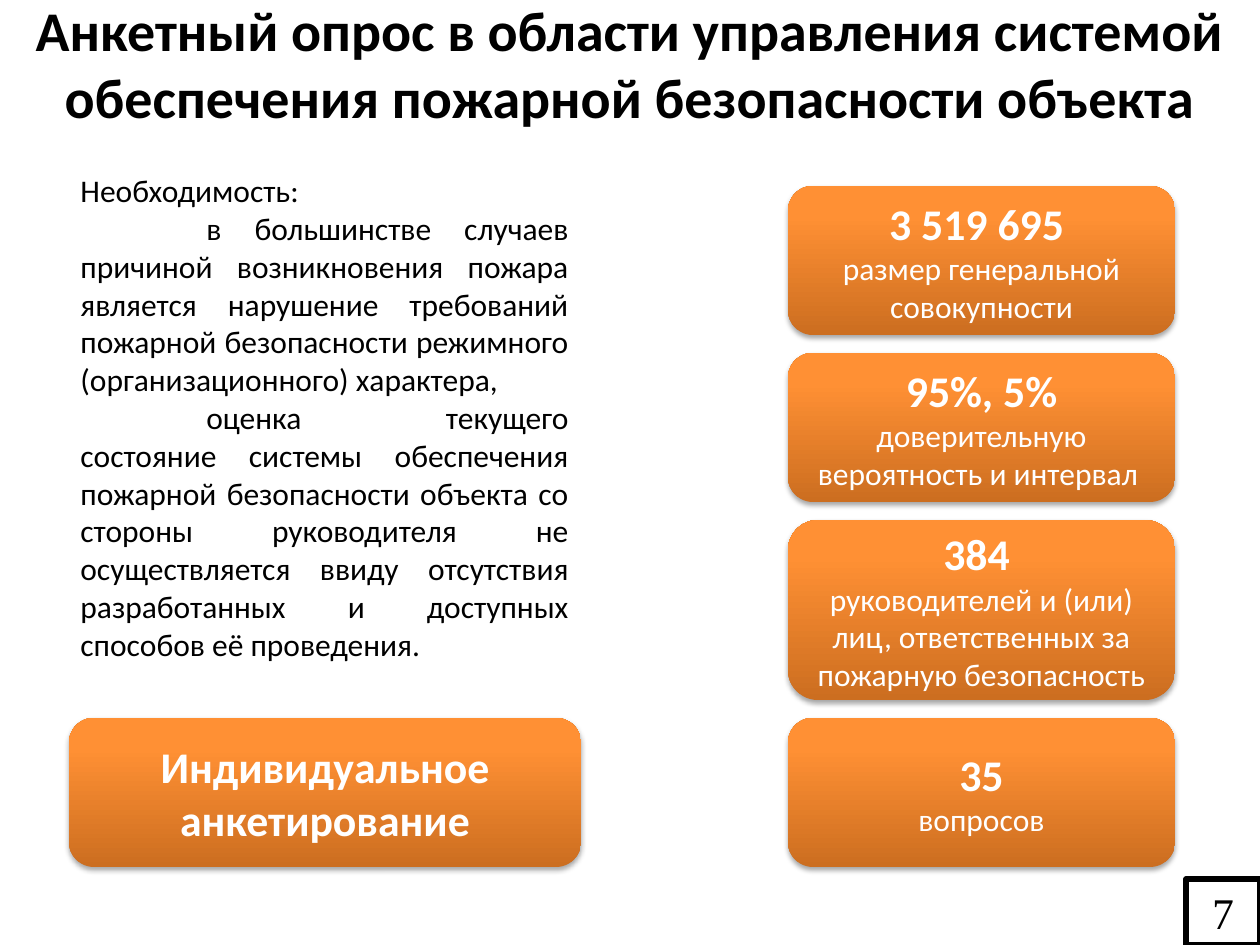
import dataclasses

import pptx
import pptx.dml.color
import pptx.enum.shapes
import pptx.enum.text
import pptx.oxml
import pptx.oxml.ns
import pptx.util

EMU_PER_PX = 914400 / 126
ALIGN = pptx.enum.text.PP_ALIGN
ANCHOR = pptx.enum.text.MSO_ANCHOR
SHAPES = pptx.enum.shapes.MSO_SHAPE


@dataclasses.dataclass(frozen=True)
class Theme:
    font: str = "Calibri"
    number_font: str = "Times New Roman"
    dark: str = "000000"
    light: str = "FFFFFF"
    card_gradient: tuple = ((0, "CC6E20"), (80, "FF9034"), (100, "FF9136"))
    title_size: int = 32
    key_size: int = 25
    body_size: int = 18


@dataclasses.dataclass(frozen=True)
class Box:
    left: int
    top: int
    width: int
    height: int


@dataclasses.dataclass(frozen=True)
class Card:
    box: Box
    heading: str
    caption: str = ""


THEME = Theme()
TITLE = "Анкетный опрос в области управления системой обеспечения пожарной безопасности объекта"
REASONS_HEADING = "Необходимость:"
REASONS = (
    "в большинстве случаев причиной возникновения пожара является нарушение требований "
    "пожарной безопасности режимного (организационного) характера,",
    "оценка текущего состояние системы обеспечения пожарной безопасности объекта со стороны "
    "руководителя не осуществляется ввиду отсутствия разработанных и доступных способов её "
    "проведения.",
)
REASON_INDENT = 126
CARD_HEIGHT = 149
CARD_GAP = 18
COLUMN_LEFT, COLUMN_TOP, COLUMN_WIDTH = 788, 186, 387
# Height, heading and caption of each card in the right column
COLUMN = (
    (CARD_HEIGHT, "3 519 695 ", "размер генеральной совокупности"),
    (CARD_HEIGHT, "95%, 5%", "доверительную вероятность и интервал "),
    (180, "384 ", "руководителей и (или) лиц, ответственных за пожарную безопасность"),
    (CARD_HEIGHT, "35", "вопросов"),
)


def emu(px: int) -> pptx.util.Emu:
    return pptx.util.Emu(round(px * EMU_PER_PX))


def edges(box: Box) -> tuple:
    return emu(box.left), emu(box.top), emu(box.width), emu(box.height)


def format_paragraph(paragraph, text, size, color, align, bold=False, font=THEME.font) -> None:
    paragraph.text = text
    paragraph.alignment = align
    paragraph.font.name = font
    paragraph.font.size = pptx.util.Pt(size)
    paragraph.font.bold = bold
    paragraph.font.color.rgb = pptx.dml.color.RGBColor.from_string(color)


def add_title(slide) -> None:
    title = slide.shapes.title
    title.left, title.top, title.width, title.height = edges(Box(0, 0, 1260, 125))
    frame = title.text_frame
    frame.word_wrap = True
    frame.auto_size = pptx.enum.text.MSO_AUTO_SIZE.NONE
    frame.vertical_anchor = ANCHOR.MIDDLE
    format_paragraph(frame.paragraphs[0], TITLE, THEME.title_size, THEME.dark, ALIGN.CENTER, True)


def add_reasons(slide) -> None:
    frame = slide.shapes.add_textbox(*edges(Box(68, 165, 513, 509))).text_frame
    frame.word_wrap = True
    frame.auto_size = pptx.enum.text.MSO_AUTO_SIZE.SHAPE_TO_FIT_TEXT
    format_paragraph(
        frame.paragraphs[0], REASONS_HEADING, THEME.body_size, THEME.dark, ALIGN.JUSTIFY
    )
    for reason in REASONS:
        paragraph = frame.add_paragraph()
        format_paragraph(paragraph, reason, THEME.body_size, THEME.dark, ALIGN.JUSTIFY)
        paragraph._p.get_or_add_pPr().set("indent", str(emu(REASON_INDENT)))


def style_card(shape) -> None:
    """Give the card its upward gradient and soft shadow, without an outline."""
    namespace = pptx.oxml.ns.nsdecls("a")
    shape.fill.gradient()
    shape.fill.gradient_angle = 90
    stops = "".join(
        f'<a:gs pos="{position * 1000}"><a:srgbClr val="{color}"/></a:gs>'
        for position, color in THEME.card_gradient
    )
    properties = shape._element.spPr
    old_stops = properties.find(".//" + pptx.oxml.ns.qn("a:gsLst"))
    old_stops.getparent().replace(
        old_stops, pptx.oxml.parse_xml(f"<a:gsLst {namespace}>{stops}</a:gsLst>")
    )
    shape.line.fill.background()
    shape.shadow.inherit = False
    blur, distance = pptx.util.Pt(3.1), pptx.util.Pt(1.8)
    properties.find(pptx.oxml.ns.qn("a:effectLst")).append(pptx.oxml.parse_xml(
        f'<a:outerShdw {namespace} blurRad="{blur}" dist="{distance}" dir="5400000" '
        f'rotWithShape="0"><a:srgbClr val="{THEME.dark}"><a:alpha val="35000"/>'
        "</a:srgbClr></a:outerShdw>"
    ))


def add_card(slide, card: Card) -> None:
    shape = slide.shapes.add_shape(SHAPES.ROUNDED_RECTANGLE, *edges(card.box))
    style_card(shape)
    frame = shape.text_frame
    frame.word_wrap = True
    frame.vertical_anchor = ANCHOR.MIDDLE
    format_paragraph(
        frame.paragraphs[0], card.heading, THEME.key_size, THEME.light, ALIGN.CENTER, True
    )
    if card.caption:
        format_paragraph(
            frame.add_paragraph(), card.caption, THEME.body_size, THEME.light, ALIGN.CENTER
        )


def add_page_number(slide) -> None:
    shape = slide.shapes.add_shape(SHAPES.RECTANGLE, *edges(Box(1186, 879, 74, 66)))
    shape.shadow.inherit = False
    shape.fill.background()
    shape.line.color.rgb = pptx.dml.color.RGBColor.from_string(THEME.dark)
    shape.line.width = pptx.util.Pt(3)
    frame = shape.text_frame
    frame.vertical_anchor = ANCHOR.MIDDLE
    format_paragraph(
        frame.paragraphs[0], "7", THEME.key_size, THEME.dark, ALIGN.CENTER, font=THEME.number_font
    )


def main() -> None:
    presentation = pptx.Presentation()
    presentation.slide_width, presentation.slide_height = emu(1260), emu(945)
    slide = presentation.slides.add_slide(presentation.slide_layouts.get_by_name("Title Only"))
    add_title(slide)
    add_page_number(slide)
    add_reasons(slide)
    top = COLUMN_TOP
    for height, heading, caption in COLUMN:
        add_card(slide, Card(Box(COLUMN_LEFT, top, COLUMN_WIDTH, height), heading, caption))
        top += height + CARD_GAP
    survey_top = top - CARD_GAP - CARD_HEIGHT
    add_card(slide, Card(Box(69, survey_top, 512, CARD_HEIGHT), "Индивидуальное анкетирование"))
    presentation.save("out.pptx")


if __name__ == "__main__":
    main()
